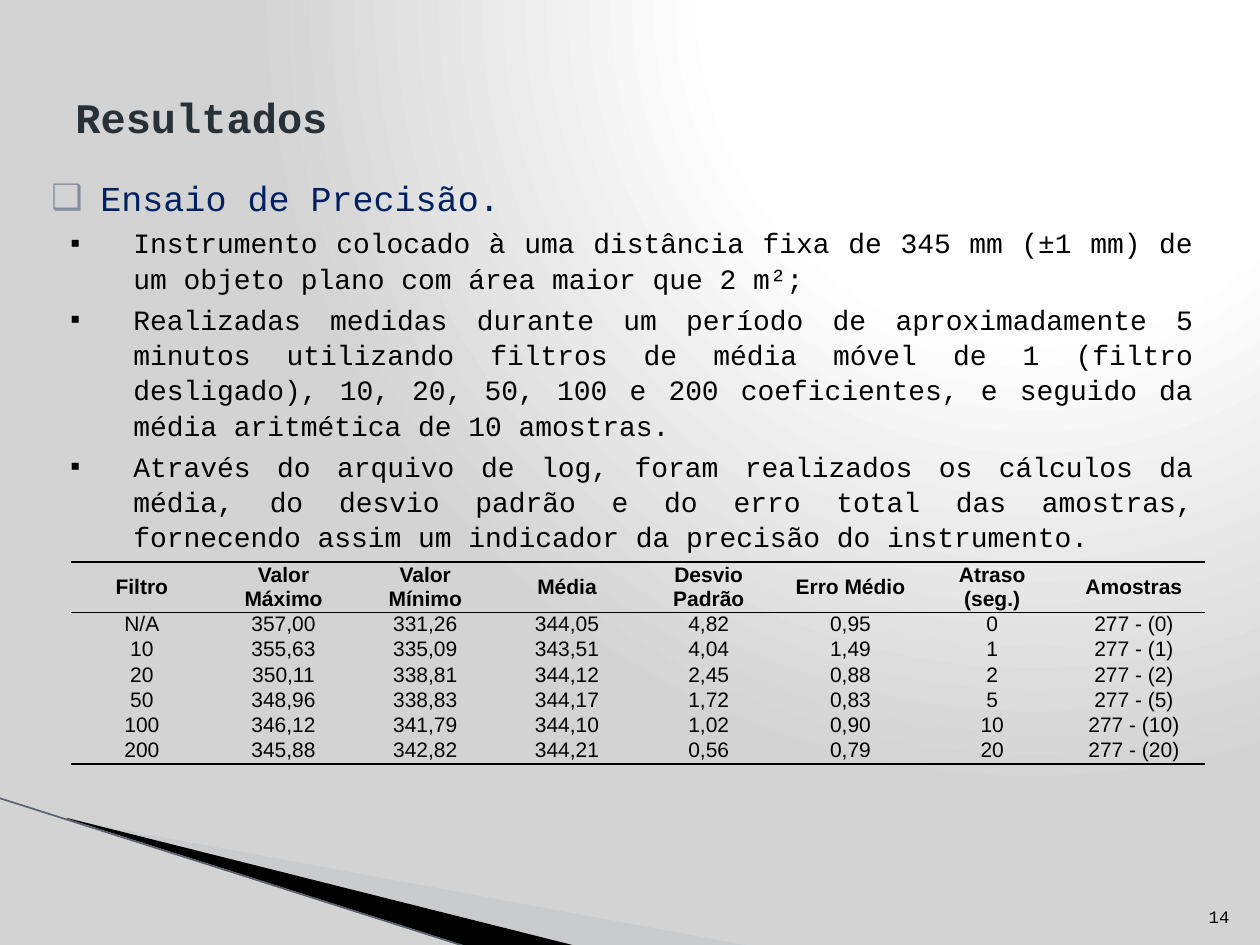
from lxml.etree import SubElement
from pptx import Presentation
from pptx.dml.color import RGBColor
from pptx.enum.shapes import MSO_CONNECTOR
from pptx.enum.text import MSO_ANCHOR, PP_ALIGN
from pptx.oxml import parse_xml
from pptx.oxml.ns import nsdecls, qn
from pptx.util import Pt

PX = 914400 / 126
MONO, SANS = "Courier New", "Arial"
COLORS = {
    "white": "FFFFFF", "gray": "D3D3D3", "black": "000000", "title": "283138",
    "heading": "002060", "box_bullet": "838D9B", "wedge": "BABFC6", "edge": "5A616E",
}
HEADING = "Ensaio de Precisão."
BULLETS = [
    "Instrumento colocado à uma distância fixa de 345 mm (±1 mm) de um objeto plano "
    "com área maior que 2 m²;",
    "Realizadas medidas durante um período de aproximadamente 5 minutos utilizando "
    "filtros de média móvel de 1 (filtro desligado), 10, 20, 50, 100 e 200 "
    "coeficientes, e seguido da média aritmética de 10 amostras.",
    "Através do arquivo de log, foram realizados os cálculos da média, do desvio "
    "padrão e do erro total das amostras, fornecendo assim um indicador da precisão "
    "do instrumento.",
]
RESULTS = [
    ["Filtro", "Valor Máximo", "Valor Mínimo", "Média", "Desvio Padrão",
     "Erro Médio", "Atraso (seg.)", "Amostras"],
    ["N/A", "357,00", "331,26", "344,05", "4,82", "0,95", "0", "277 - (0)"],
    ["10", "355,63", "335,09", "343,51", "4,04", "1,49", "1", "277 - (1)"],
    ["20", "350,11", "338,81", "344,12", "2,45", "0,88", "2", "277 - (2)"],
    ["50", "348,96", "338,83", "344,17", "1,72", "0,83", "5", "277 - (5)"],
    ["100", "346,12", "341,79", "344,10", "1,02", "0,90", "10", "277 - (10)"],
    ["200", "345,88", "342,82", "344,21", "0,56", "0,79", "20", "277 - (20)"],
]


def px(value):
    return round(value * PX)


def color(name):
    return RGBColor.from_string(COLORS[name])


def set_background(slide):
    slide.background.fill.solid()
    properties = slide.element.find(".//" + qn("p:bgPr"))
    stops = "".join(
        f'<a:gs pos="{position}000"><a:srgbClr val="{COLORS[name]}"/></a:gs>'
        for position, name in [(0, "white"), (40, "white"), (100, "gray")]
    )
    gradient = parse_xml(
        f'<a:gradFill {nsdecls("a")} rotWithShape="1"><a:gsLst>{stops}</a:gsLst>'
        '<a:path path="circle"><a:fillToRect l="65000" b="98000"/></a:path></a:gradFill>'
    )
    properties.replace(properties[0], gradient)


def add_wedge(slide, points, fill, alpha=100):
    builder = slide.shapes.build_freeform(*points[0], scale=PX)
    builder.add_line_segments(points[1:], close=True)
    shape = builder.convert_to_shape()
    shape.shadow.inherit = False
    shape.line.fill.background()
    shape.fill.solid()
    shape.fill.fore_color.rgb = color(fill)
    if alpha < 100:
        value = shape.element.spPr.find(".//" + qn("a:srgbClr"))
        SubElement(value, qn("a:alpha"), val=str(alpha * 1000))


def add_edge(slide, start, end):
    connector = slide.shapes.add_connector(
        MSO_CONNECTOR.STRAIGHT, *map(px, start + end))
    connector.line.color.rgb = color("edge")
    connector.line.width = Pt(0.95)
    SubElement(connector.element.spPr, qn("a:effectLst"))


def style(paragraph, size, name, font=MONO, bold=False, align=PP_ALIGN.LEFT):
    paragraph.alignment = align
    paragraph.font.size = Pt(size)
    paragraph.font.name = font
    paragraph.font.bold = bold
    paragraph.font.color.rgb = color(name)


def add_text_frame(slide, box, anchor):
    frame = slide.shapes.add_textbox(*map(px, box)).text_frame
    frame.word_wrap = True
    frame.vertical_anchor = anchor
    return frame


def add_label(slide, box, text, anchor, size, name, **options):
    paragraph = add_text_frame(slide, box, anchor).paragraphs[0]
    paragraph.text = text
    style(paragraph, size, name, **options)


def write_bullet(paragraph, text, symbol, symbol_color, margin, hanging, size, name):
    paragraph.text = text
    properties = paragraph._p.get_or_add_pPr()
    properties.set("marL", str(px(margin)))
    properties.set("indent", str(-px(hanging)))
    bullet_color = SubElement(properties, qn("a:buClr"))
    SubElement(bullet_color, qn("a:srgbClr"), val=COLORS[symbol_color])
    SubElement(properties, qn("a:buFont"), typeface=SANS)
    SubElement(properties, qn("a:buChar"), char=symbol)
    style(paragraph, size, name, align=PP_ALIGN.JUSTIFY)


def add_body(slide):
    frame = add_text_frame(slide, (39, 170, 1167, 380), MSO_ANCHOR.TOP)
    write_bullet(frame.paragraphs[0], HEADING, "❑", "box_bullet", 49, 49, 20, "heading")
    for text in BULLETS:
        paragraph = frame.add_paragraph()
        write_bullet(paragraph, text, "▪", "black", 82, 63, 16, "black")
        paragraph.space_before = Pt(3.5)
        paragraph.line_spacing = 1.05


def set_borders(cell, ruled):
    properties = cell._tc.get_or_add_tcPr()
    for side in ("L", "R", "T", "B"):
        border = SubElement(properties, qn(f"a:ln{side}"), w=str(Pt(1)))
        if side in ruled:
            fill = SubElement(border, qn("a:solidFill"))
            SubElement(fill, qn("a:srgbClr"), val=COLORS["black"])
        else:
            SubElement(border, qn("a:noFill"))


def add_results_table(slide, box):
    table = slide.shapes.add_table(
        len(RESULTS), len(RESULTS[0]), *map(px, box)).table
    table.first_row = table.horz_banding = False
    rules = {0: "TB", 1: "T", len(RESULTS) - 1: "B"}
    for row, values in enumerate(RESULTS):
        header = row == 0
        table.rows[row].height = px(47 if header else 23)
        for column, text in enumerate(values):
            cell = table.cell(row, column)
            cell.text = text
            cell.margin_left = cell.margin_right = px(9)
            cell.margin_top = cell.margin_bottom = 0
            cell.vertical_anchor = MSO_ANCHOR.MIDDLE if header else MSO_ANCHOR.TOP
            set_borders(cell, rules.get(row, ""))
            cell.fill.background()
            style(cell.text_frame.paragraphs[0], 12, "black", SANS, header,
                  PP_ALIGN.CENTER)


def main():
    """Build the precision test results slide."""
    presentation = Presentation()
    presentation.slide_width, presentation.slide_height = px(1260), px(945)
    slide = presentation.slides.add_slide(presentation.slide_layouts[6])
    set_background(slide)
    add_wedge(slide, [(69, 820), (750, 946), (575, 946), (69, 819)], "wedge", 40)
    add_wedge(slide, [(67, 818), (576, 946), (469, 947), (68, 819)], "black")
    add_edge(slide, (-1, 798), (467, 947))
    add_body(slide)
    add_label(slide, (1192, 883, 50, 50), "14", MSO_ANCHOR.BOTTOM, 10, "black",
              align=PP_ALIGN.RIGHT)
    add_label(slide, (63, 38, 1134, 158), "Resultados", MSO_ANCHOR.MIDDLE, 24, "title",
              bold=True)
    add_results_table(slide, (71, 562, 1134, 188))
    presentation.save("out.pptx")


if __name__ == "__main__":
    main()
